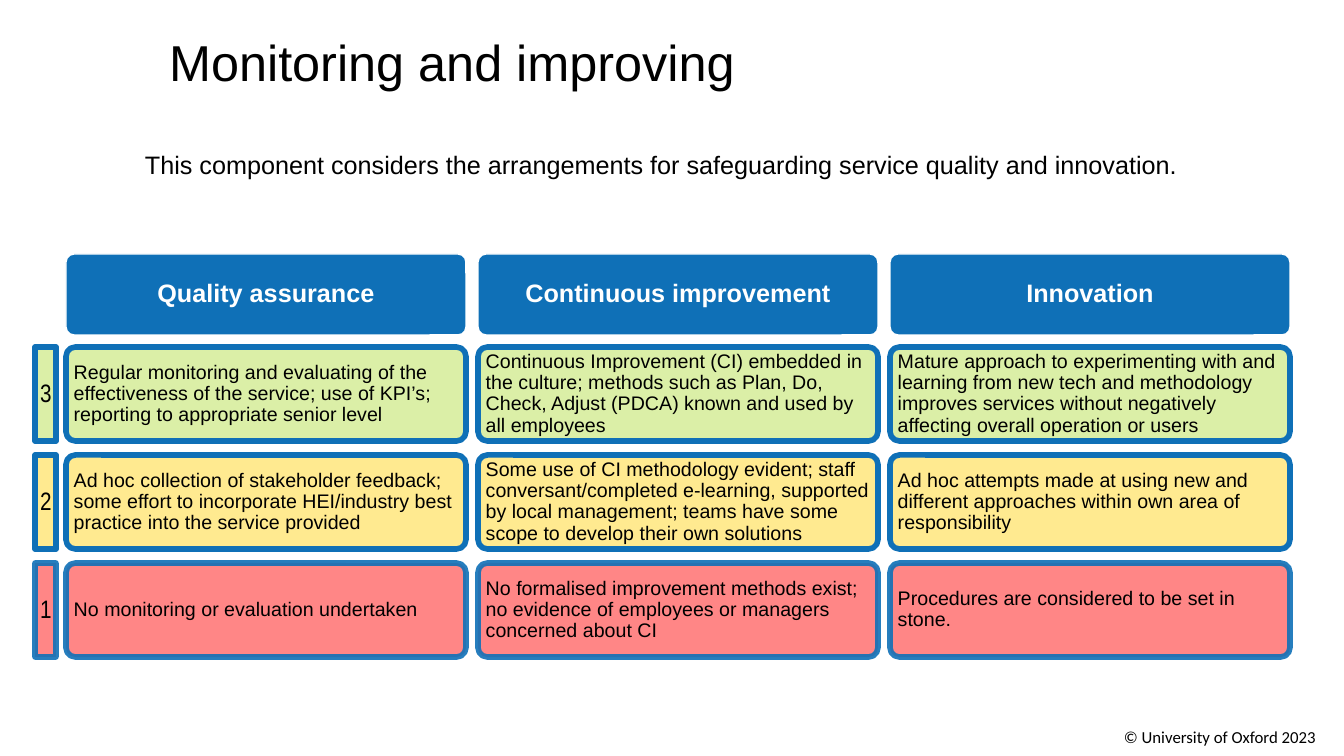
import pptx
import pptx.dml.color
import pptx.enum.shapes
import pptx.enum.text
import pptx.oxml.ns
import pptx.util
from lxml import etree

# Content
TITLE = "Monitoring and improving"
SUMMARY = ("This component considers the arrangements for safeguarding "
           "service quality and innovation.")
COPYRIGHT = "© University of Oxford 2023"
HEADINGS = ["Quality assurance", "Continuous improvement", "Innovation"]
LEVELS = [  # level, fill, line opacity, one text for each heading
    ("3", "D8EE9E", 100, [
        "Regular monitoring and evaluating of the effectiveness of the service; "
        "use of KPI’s; reporting to appropriate senior level",
        "Continuous Improvement (CI) embedded in the culture; methods such as "
        "Plan, Do, Check, Adjust (PDCA) known and used by all employees",
        "Mature approach to experimenting with and learning from new tech and "
        "methodology improves services without negatively affecting overall "
        "operation or users"]),
    ("2", "FFE885", 100, [
        "Ad hoc collection of stakeholder feedback; some effort to incorporate "
        "HEI/industry best practice into the service provided",
        "Some use of CI methodology evident; staff conversant/completed "
        "e-learning, supported by local management; teams have some scope to "
        "develop their own solutions",
        "Ad hoc attempts made at using new and different approaches within own "
        "area of responsibility"]),
    ("1", "FF7979", 90, [
        "No monitoring or evaluation undertaken",
        "No formalised improvement methods exist; no evidence of employees or "
        "managers concerned about CI",
        "Procedures are considered to be set in stone."]),
]
BLUE, WHITE, BLACK = "0F70B7", "FFFFFF", "000000"

# Layout in px
SLIDE_W, SLIDE_H = 1344, 756
PX = 914400 / 100.8
COLUMN_LEFT, COLUMN_PITCH, COLUMN_W = 66, 412, 400
HEADING_TOP, HEADING_H = 254, 81
ROW_TOP, ROW_PITCH, ROW_H = 347, 108, 94
LEVEL_LEFT, LEVEL_W = 35, 21
INSET = 5

ANCHOR = pptx.enum.text.MSO_ANCHOR
ALIGN = pptx.enum.text.PP_ALIGN
SHAPES = pptx.enum.shapes.MSO_SHAPE


def px(length):
    return pptx.util.Emu(round(length * PX))


def rgb(value):
    return pptx.dml.color.RGBColor.from_string(value)


def set_all(target, values):
    for name, value in values.items():
        setattr(target, name, value)


def set_opacity(fill_parent, percent):
    if percent < 100:
        color = next(fill_parent.iter(pptx.oxml.ns.qn("a:srgbClr")))
        alpha = etree.SubElement(color, pptx.oxml.ns.qn("a:alpha"))
        alpha.set("val", str(percent * 1000))


def write(shape, text, size, font="Arial", color=BLACK, bold=False,
          frame=None, paragraph=None):
    set_all(shape.text_frame, {"word_wrap": True, **(frame or {})})
    line = shape.text_frame.paragraphs[0]
    line.text = text
    set_all(line, {"alignment": ALIGN.LEFT, **(paragraph or {})})
    set_all(line.font, {"size": pptx.util.Pt(size), "name": font, "bold": bold})
    line.font.color.rgb = rgb(color)


def add_box(kind, area, text, fill, fill_opacity, line, line_width,
            line_opacity, **text_format):
    box = slide.shapes.add_shape(kind, *map(px, area))
    box.shadow.inherit = False
    if kind == SHAPES.ROUNDED_RECTANGLE:
        box.adjustments[0] = 0.1
    box.fill.solid()
    box.fill.fore_color.rgb = rgb(fill)
    set_opacity(box.fill._xPr.find(pptx.oxml.ns.qn("a:solidFill")), fill_opacity)
    box.line.color.rgb = rgb(line)
    box.line.width = pptx.util.Pt(line_width)
    set_opacity(box.line._get_or_add_ln(), line_opacity)
    margins = {"margin_" + side: px(INSET)
               for side in ("left", "top", "right", "bottom")}
    align = text_format.pop("align", ALIGN.LEFT)
    write(box, text, frame={"vertical_anchor": ANCHOR.MIDDLE, **margins},
          paragraph={"alignment": align, "line_spacing": 0.9}, **text_format)


deck = pptx.Presentation()
set_all(deck, {"slide_width": px(SLIDE_W), "slide_height": px(SLIDE_H)})
slide = deck.slides.add_slide(deck.slide_layouts[5])

# Title, summary and copyright line
title = slide.shapes.title
set_all(title, {"left": px(159), "top": px(26), "width": px(907), "height": px(72)})
write(title, TITLE, 36, frame={"vertical_anchor": ANCHOR.TOP})
summary = slide.shapes.add_textbox(*map(px, (135, 144, 1112, 40)))
write(summary, SUMMARY, 18, frame={"vertical_anchor": ANCHOR.MIDDLE})
copyright_line = slide.shapes.add_textbox(*map(px, (1114, 722, 231, 30)))
write(copyright_line, COPYRIGHT, 12, font="Calibri", frame={"word_wrap": False})

# Column headings
column_lefts = [COLUMN_LEFT + i * COLUMN_PITCH for i in range(len(HEADINGS))]
for left, heading in zip(column_lefts, HEADINGS):
    add_box(SHAPES.ROUNDED_RECTANGLE, (left, HEADING_TOP, COLUMN_W, HEADING_H),
            heading, BLUE, 100, WHITE, 1, 100,
            size=18, color=WHITE, bold=True, align=ALIGN.CENTER)

# Maturity levels
for row, (level, fill, line_opacity, descriptions) in enumerate(LEVELS):
    top = ROW_TOP + row * ROW_PITCH
    look = (fill, 90, BLUE, 4, line_opacity)
    add_box(SHAPES.RECTANGLE, (LEVEL_LEFT, top, LEVEL_W, ROW_H), level, *look,
            size=18, font="Arial Narrow")
    for left, description in zip(column_lefts, descriptions):
        add_box(SHAPES.ROUNDED_RECTANGLE, (left, top, COLUMN_W, ROW_H),
                description, *look, size=14)

deck.save("out.pptx")
